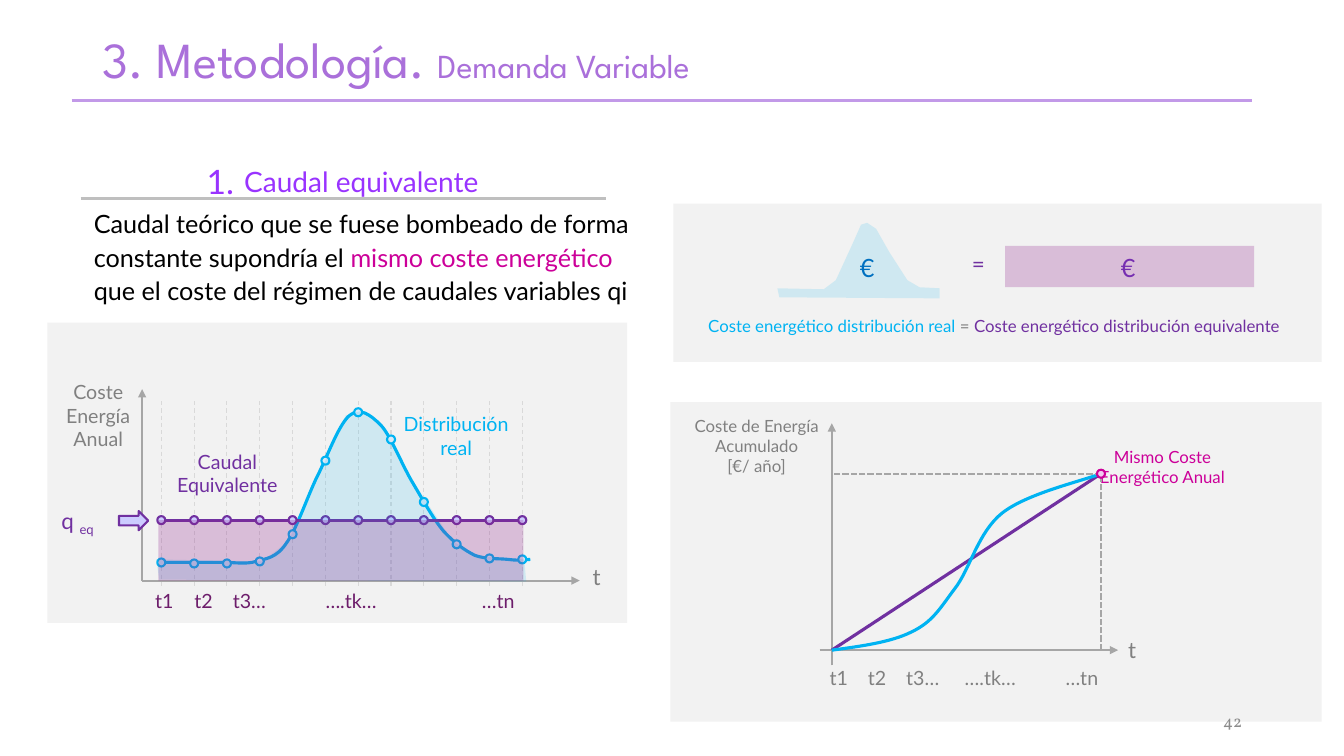
from lxml import etree
from pptx import Presentation
from pptx import util as u
from pptx.dml.color import RGBColor
from pptx.enum import dml, shapes, text
from pptx.oxml.ns import qn

PURPLE, BLUE, GRAY, AXIS = "7030A0", "00B3F2", "808080", "A6A6A6"
PINK, VIOLET, PANEL, GRID = "CC0099", "9933FF", "F2F2F2", "D9D9D9"
LEFT, CENTER, RIGHT = text.PP_ALIGN.LEFT, text.PP_ALIGN.CENTER, text.PP_ALIGN.RIGHT


def color(value):
    return RGBColor.from_string(value)


def add_run(paragraph, content, size=14, ink=GRAY, font="Lato", baseline=None):
    run = paragraph.add_run()
    run.text = content
    run.font.size, run.font.name = u.Pt(size), font
    run.font.color.rgb = color(ink)
    if baseline:
        run._r.get_or_add_rPr().set("baseline", str(baseline * 1000))


class SlideBuilder:
    """Draws styled elements on one slide."""

    def __init__(self, slide):
        self.slide = slide

    def fill_text(self, shape, paragraphs, align=CENTER, spacing=None, before=None,
                  indent=None, tabs=(), anchor=text.MSO_ANCHOR.TOP, **style):
        frame = shape.text_frame
        frame.word_wrap, frame.auto_size = True, text.MSO_AUTO_SIZE.NONE
        frame.vertical_anchor = anchor
        for index, runs in enumerate(paragraphs):
            paragraph = frame.add_paragraph() if index else frame.paragraphs[0]
            paragraph.alignment, paragraph.line_spacing = align, spacing
            if before is not None:
                paragraph.space_before = u.Pt(before)
            properties = paragraph._p.get_or_add_pPr()
            if indent is not None:
                properties.set("marL", str(u.Inches(indent)))
                properties.set("indent", "0")
                etree.SubElement(properties, qn("a:buNone"))
            if tabs:
                stops = etree.SubElement(properties, qn("a:tabLst"))
                for position in tabs:
                    etree.SubElement(stops, qn("a:tab"), pos=str(u.Inches(position)), algn="l")
            for content, changes in runs:
                add_run(paragraph, content, **{**style, **changes})

    def placeholder(self, index, box, paragraphs, **style):
        shape = self.slide.placeholders[index]
        shape.left, shape.top, shape.width, shape.height = map(u.Inches, box)
        self.fill_text(shape, paragraphs, **style)

    def label(self, box, *lines, **style):
        shape = self.slide.shapes.add_textbox(*map(u.Inches, box))
        paragraphs = [[(line, {})] if isinstance(line, str) else line for line in lines]
        self.fill_text(shape, paragraphs, **style)

    def paint(self, shape, fill=None, line=None, width=1.5, alpha=None):
        shape.shadow.inherit = False
        if fill:
            shape.fill.solid()
            shape.fill.fore_color.rgb = color(fill)
            if alpha:
                tint = shape._element.spPr.find(qn("a:solidFill"))[0]
                etree.SubElement(tint, qn("a:alpha"), val=str(alpha * 1000))
        else:
            shape.fill.background()
        if line:
            shape.line.color.rgb, shape.line.width = color(line), u.Pt(width)
        else:
            shape.line.fill.background()

    def shape(self, kind, box, fill, **style):
        self.paint(self.slide.shapes.add_shape(kind, *map(u.Inches, box)), fill, **style)

    def rectangle(self, box, fill, **style):
        self.shape(shapes.MSO_SHAPE.RECTANGLE, box, fill, **style)

    def marker(self, x, y, fill, line):
        self.shape(shapes.MSO_SHAPE.OVAL, (x - 0.04, y - 0.04, 0.08, 0.08), fill, line=line)

    def line(self, x1, y1, x2, y2, ink, width=1.5, dash=None, arrow=False):
        connector = self.slide.shapes.add_connector(
            shapes.MSO_CONNECTOR.STRAIGHT, *map(u.Inches, (x1, y1, x2, y2)))
        connector.line.color.rgb, connector.line.width = color(ink), u.Pt(width)
        if dash:
            connector.line.dash_style = dash
        if arrow:
            etree.SubElement(connector.line._get_or_add_ln(), qn("a:tailEnd"), type="triangle")
        etree.SubElement(connector._element.spPr, qn("a:effectLst"))

    def outline(self, points, close=True, **style):
        start, *others = [(u.Inches(x), u.Inches(y)) for x, y in points]
        builder = self.slide.shapes.build_freeform(*start)
        builder.add_line_segments(others, close=close)
        shape = builder.convert_to_shape()
        self.paint(shape, **style)
        return shape

    def curve(self, points, straight=0):
        shape = self.outline(points, close=False, line=BLUE, width=2.25)
        segments = shape._element.xpath(".//a:lnTo")[straight:]
        for start in range(0, len(segments), 3):
            first, *others = segments[start:start + 3]
            bezier = etree.Element(qn("a:cubicBezTo"))
            first.addprevious(bezier)
            for segment in (first, *others):
                bezier.append(segment[0])
                segment.getparent().remove(segment)


def add_headings(builder):
    builder.placeholder(0, (0.92, -0.11, 11.5, 1.45),
                        [[("3. Metodología. ", {}), ("Demanda Variable", {"size": 24})]],
                        align=LEFT, spacing=0.9, anchor=text.MSO_ANCHOR.MIDDLE,
                        size=36, ink="AA70DA", font="League Spartan")
    builder.placeholder(1, (0.42, 1.42, 6.33, 0.77), [[("Caudal equivalente", {})]],
                        spacing=1.5, before=10, indent=0, size=20, ink=VIOLET)
    builder.placeholder(2, (0.33, 1.99, 6.04, 5.19), [[
        ("Caudal teórico que se fuese bombeado de forma constante supondría el ", {}),
        ("mismo coste energético", {"ink": PINK}),
        (" que el coste del régimen de caudales variables qi", {})]],
        align=LEFT, spacing=1.1, before=5, indent=0.5, size=18, ink="000000")
    builder.line(0.71, 1, 12.42, 1, "C299E8", 2.25)
    builder.line(0.8, 1.97, 6.01, 1.97, "BFBFBF")
    builder.label((1.89, 1.35, 0.59, 0.77), "1.", spacing=1.5, before=10, size=24, ink=VIOLET)


def add_flow_chart(builder):
    builder.rectangle((0.47, 3.2, 5.75, 2.98), PANEL)
    flows = [5.58, 5.59, 5.59, 5.57, 5.3, 4.57, 4.09, 4.36, 4.98, 5.4, 5.54, 5.55]
    first, last, mean = 1.6, 5.18, 5.16
    times = [first + (last - first) * i / (len(flows) - 1) for i in range(len(flows))]
    for time in times:
        builder.line(time, 3.98, time, 5.84, GRID, 0.75, dml.MSO_LINE.DASH)
    builder.line(1.41, 5.76, 1.41, 3.86, AXIS, arrow=True)
    builder.line(1.41, 5.76, 5.75, 5.76, AXIS, arrow=True)
    builder.label((1.44, 5.79, 4.72, 0.34), "t1\tt2\tt3…\t….tk…\t…tn",
                  align=LEFT, tabs=(0.39, 0.77, 1.69, 3.24), ink="6D1D6B")
    builder.curve([
        (1.6, 5.58), (1.91, 5.58), (2.23, 5.58),
        (2.34, 5.58), (2.44, 5.6), (2.54, 5.57), (2.64, 5.54), (2.74, 5.54), (2.84, 5.39),
        (2.95, 5.24), (3.06, 4.89), (3.17, 4.68), (3.27, 4.47), (3.37, 4.2), (3.47, 4.12),
        (3.57, 4.04), (3.67, 4.11), (3.78, 4.22), (3.88, 4.33), (3.99, 4.62), (4.1, 4.8),
        (4.2, 4.97), (4.3, 5.15), (4.4, 5.27), (4.51, 5.39), (4.61, 5.46), (4.71, 5.51),
        (4.82, 5.55), (4.95, 5.54), (5.04, 5.55), (5.13, 5.56), (5.13, 5.56), (5.26, 5.55),
    ], straight=2)
    builder.line(first, mean, last, mean, PURPLE, 2.25)
    builder.label((5.78, 5.54, 0.27, 0.37), "t", align=LEFT, size=16)
    builder.label((0.41, 3.72, 1.13, 0.81), "Coste Energía", "Anual")
    builder.label((1.57, 4.41, 1.37, 0.57), "Caudal Equivalente", ink=PURPLE)
    builder.label((3.76, 4.04, 1.53, 0.57), "Distribución real", ink=BLUE)
    builder.label((0.51, 4.98, 0.72, 0.37), [("q ", {}), ("eq", {"baseline": -25})],
                  align=LEFT, size=16, ink=PURPLE)
    builder.shape(shapes.MSO_SHAPE.RIGHT_ARROW, (1.18, 5.07, 0.29, 0.19), "CCCCFF", line=PURPLE)
    for time, flow in zip(times, flows):
        builder.marker(time, flow, "DAE9F6", BLUE)
        builder.marker(time, mean, "CCCCFF", PURPLE)
    builder.outline([
        (1.55, 5.55), (2.6, 5.57), (2.86, 5.37), (3.25, 4.52), (3.43, 4.12), (3.57, 4.08),
        (3.77, 4.2), (4.06, 4.72), (4.49, 5.37), (4.75, 5.52), (5.2, 5.55), (5.22, 5.77),
        (1.58, 5.75)], fill="00B0F0", alpha=14)
    builder.rectangle((1.57, mean, 3.62, 0.6), "92278F", alpha=26)


def add_cost_equation(builder):
    builder.rectangle((6.68, 2.02, 6.43, 1.57), PANEL)
    builder.outline([
        (7.71, 2.86), (8.17, 2.87), (8.29, 2.78), (8.46, 2.41), (8.54, 2.23), (8.6, 2.21),
        (8.69, 2.27), (8.82, 2.5), (9, 2.78), (9.12, 2.85), (9.32, 2.86), (9.32, 2.96),
        (7.73, 2.95)], fill="00B0F0", alpha=14)
    builder.rectangle((9.97, 2.44, 2.47, 0.41), "92278F", alpha=26)
    builder.label((9.54, 2.43, 0.43, 0.37), "=", align=LEFT, size=16, ink=PURPLE)
    builder.label((6.51, 3.08, 6.7, 0.3), [
        ("Coste energético distribución real ", {"ink": BLUE}), ("= ", {}),
        ("Coste energético distribución equivalente", {"ink": PURPLE})], size=12)
    for left, ink in ((8.43, "0070C0"), (11.02, "762EB1")):
        builder.label((left, 2.45, 0.43, 0.4), "€", align=LEFT, size=18, ink=ink)


def add_cumulative_chart(builder):
    builder.rectangle((6.65, 3.99, 6.46, 3.17), PANEL)
    left, bottom, right, top = 8.25, 6.45, 10.92, 4.7
    builder.line(left, 6.6, left, 4.2, AXIS, arrow=True)
    builder.line(8.13, bottom, 11.09, bottom, AXIS, arrow=True)
    builder.label((6.77, 4.07, 1.47, 0.91), "Coste de Energía Acumulado", "[€/ año]", size=12)
    builder.line(left, bottom, right, top, PURPLE, 2.25)
    builder.curve([
        (left, bottom), (8.55, 6.41), (8.84, 6.37), (9.04, 6.27), (9.25, 6.17), (9.32, 6.04),
        (9.47, 5.84), (9.62, 5.65), (9.7, 5.28), (9.94, 5.09), (10.18, 4.9), (10.7, 4.78),
        (right, top)])
    builder.label((11.09, 6.26, 0.27, 0.37), "t", align=LEFT, size=16)
    builder.label((8.13, 6.56, 3.33, 0.34), "t1\tt2\tt3…\t….tk…\t…tn",
                  align=LEFT, tabs=(0.38, 0.76, 1.34, 2.34))
    builder.line(right, top, left, top, AXIS, dash=dml.MSO_LINE.SQUARE_DOT)
    builder.label((10.8, 4.38, 1.46, 0.91), "Mismo Coste Energético Anual", size=12, ink=PINK)
    builder.line(right, bottom, right, top, AXIS, dash=dml.MSO_LINE.SQUARE_DOT)
    builder.marker(right, top, "F1CCF0", PINK)


def main():
    presentation = Presentation()
    presentation.slide_width, presentation.slide_height = u.Inches(13.33), u.Inches(7.5)
    builder = SlideBuilder(presentation.slides.add_slide(presentation.slide_layouts[3]))
    add_headings(builder)
    add_flow_chart(builder)
    add_cost_equation(builder)
    add_cumulative_chart(builder)
    builder.label((9.42, 6.95, 3, 0.4), "42", align=RIGHT, anchor=text.MSO_ANCHOR.MIDDLE,
                  size=12, ink="8C8C8C", font="Vollkorn")
    presentation.save("out.pptx")


if __name__ == "__main__":
    main()
